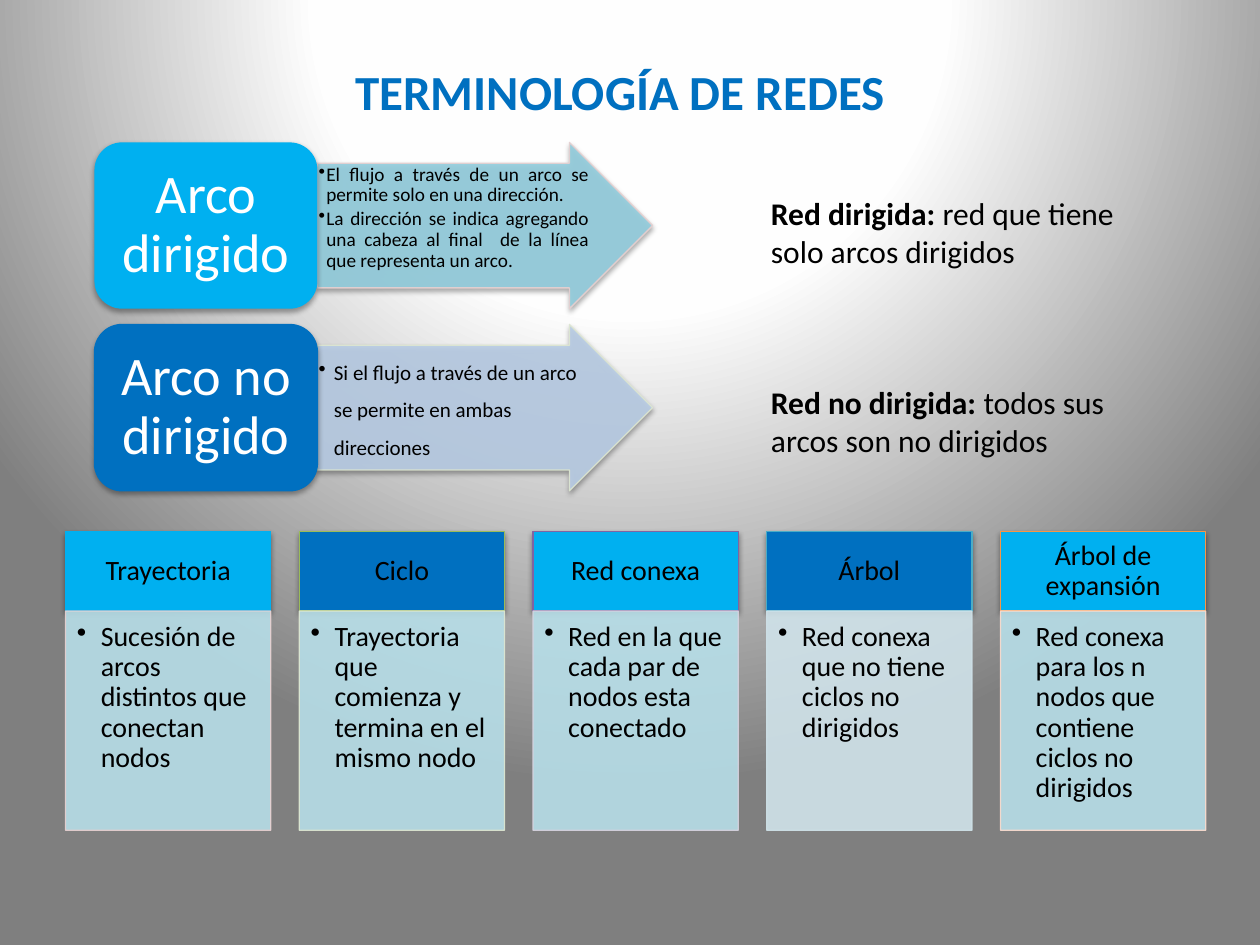
from lxml import etree
from pptx import Presentation
from pptx.dml.color import RGBColor
from pptx.enum.shapes import MSO_SHAPE
from pptx.enum.text import MSO_ANCHOR, PP_ALIGN
from pptx.oxml import parse_xml
from pptx.oxml.ns import qn
from pptx.util import Inches, Pt

LEFT, CENTER, JUSTIFY = PP_ALIGN.LEFT, PP_ALIGN.CENTER, PP_ALIGN.JUSTIFY
TOP, MIDDLE = MSO_ANCHOR.TOP, MSO_ANCHOR.MIDDLE
ARROW, ROUNDED, RECTANGLE = MSO_SHAPE.RIGHT_ARROW, MSO_SHAPE.ROUNDED_RECTANGLE, MSO_SHAPE.RECTANGLE

BLACK = RGBColor(0x00, 0x00, 0x00)
WHITE = RGBColor(0xFF, 0xFF, 0xFF)
SKY = RGBColor(0x00, 0xB0, 0xF0)
BLUE = RGBColor(0x00, 0x70, 0xC0)
TEAL = RGBColor(0x93, 0xCD, 0xDD)
LAVENDER = RGBColor(0xB9, 0xCD, 0xE5)
PALE_TEAL = RGBColor(0xB7, 0xDE, 0xE8)
PALE_BLUE = RGBColor(0xD0, 0xE3, 0xEA)
PALE_PINK = RGBColor(0xE8, 0xD0, 0xD0)
PALE_GREEN = RGBColor(0xDE, 0xE7, 0xD1)
PALE_PURPLE = RGBColor(0xD8, 0xD3, 0xE0)
PALE_ORANGE = RGBColor(0xFC, 0xDD, 0xCF)
GREEN = RGBColor(0x9B, 0xBB, 0x59)
PURPLE = RGBColor(0x80, 0x64, 0xA2)
AQUA = RGBColor(0x4B, 0xAC, 0xC6)
ORANGE = RGBColor(0xF7, 0x96, 0x46)
DRAWING_NS = 'xmlns:a="http://schemas.openxmlformats.org/drawingml/2006/main"'


def write_text(shape, paragraphs, size, color=BLACK, align=LEFT, anchor=TOP, insets=(0.1, 0.05, 0.1, 0.05),
               spacing=1.0, bullet_indent=0, gap=0, bold=False):
    """Each paragraph is a string, or a pair of a bold lead and plain text."""
    frame = shape.text_frame
    frame.word_wrap = True
    frame.vertical_anchor = anchor
    frame.margin_left, frame.margin_top, frame.margin_right, frame.margin_bottom = map(Inches, insets)
    for number, content in enumerate(paragraphs):
        para = frame.add_paragraph() if number else frame.paragraphs[0]
        para.alignment = align
        para.line_spacing = spacing
        para.space_before = Pt(gap if number else 0)
        runs = [(content, bold)] if isinstance(content, str) else zip(content, (True, False))
        for text, is_bold in runs:
            span = para.add_run()
            span.text = text
            span.font.name = "Calibri"
            span.font.size = Pt(size)
            span.font.bold = is_bold
            span.font.color.rgb = color
        if bullet_indent:
            properties = para._p.get_or_add_pPr()
            properties.set("marL", str(Inches(bullet_indent)))
            properties.set("indent", str(-Inches(bullet_indent)))
            etree.SubElement(properties, qn("a:buChar")).set("char", "•")


def add_box(kind, left, top, width, height, fill, line=None, opacity=100, shadow=0):
    box = slide.shapes.add_shape(kind, Inches(left), Inches(top), Inches(width), Inches(height))
    box.shadow.inherit = False
    box.fill.solid()
    box.fill.fore_color.rgb = fill
    if line is None:
        box.line.fill.background()
    else:
        box.line.color.rgb = line
        box.line.width = Pt(0.75)
    properties = box._element.spPr
    if opacity < 100:
        for color in properties.iter(qn("a:srgbClr")):
            etree.SubElement(color, qn("a:alpha")).set("val", str(opacity * 1000))
    if shadow:
        properties.find(qn("a:effectLst")).append(parse_xml(
            f'<a:outerShdw {DRAWING_NS} blurRad="{Pt(3.1)}" dist="{Pt(1.7)}" dir="5400000" rotWithShape="0">'
            f'<a:srgbClr val="000000"><a:alpha val="{shadow * 1000}"/></a:srgbClr></a:outerShdw>'))
    return box


deck = Presentation()
deck.slide_width, deck.slide_height = Inches(10), Inches(7.5)
slide = deck.slides.add_slide(deck.slide_layouts[5])

# Background: radial gradient centred above the slide
slide.background.fill.solid()
background = slide._element.find(".//" + qn("p:bgPr"))
background.replace(background[0], parse_xml(
    f'<a:gradFill {DRAWING_NS} rotWithShape="1"><a:gsLst>'
    '<a:gs pos="0"><a:srgbClr val="FFFFFF"/></a:gs>'
    '<a:gs pos="40000"><a:srgbClr val="FEFEFE"/></a:gs>'
    '<a:gs pos="100000"><a:srgbClr val="7F7F7F"/></a:gs></a:gsLst>'
    '<a:path path="circle"><a:fillToRect l="50000" t="-80000" r="50000" b="180000"/></a:path>'
    '</a:gradFill>'))

# Title
title = slide.shapes.title
title.left, title.top, title.width, title.height = map(Inches, (1.3, 0.44, 7.24, 0.57))
write_text(title, ["TERMINOLOGÍA DE REDES"], 28, color=BLUE, align=CENTER, anchor=MIDDLE, bold=True)

# Network definitions on the right
definitions = slide.shapes.add_textbox(Inches(6.02), Inches(1.49), Inches(3.39), Inches(2.22))
write_text(definitions, [("Red dirigida: ", "red que tiene solo arcos dirigidos"),
                         ("Red no dirigida: ", "todos sus arcos son no dirigidos")],
           18, insets=(0.1, 0.05, 0.3, 0.05), gap=65)

# Arc types: a label and an arrow with its explanation
arcs = [
    ("Arco dirigido", SKY, None, TEAL, PALE_PINK,
     ["El flujo a través de un arco se permite solo en una dirección.",
      "La dirección se indica agregando una cabeza al final  de la línea que representa un arco."],
     dict(size=11, align=JUSTIFY, spacing=0.9, bullet_indent=0.06, gap=1.65)),
    ("Arco no dirigido", BLUE, BLUE, LAVENDER, PALE_GREEN,
     ["Si el flujo a través de un arco se permite en ambas direcciones"],
     dict(size=12, spacing=1.5, bullet_indent=0.12)),
]
for row, (name, fill, line, arrow_fill, arrow_line, notes, style) in enumerate(arcs):
    top = 1.13 + row * 1.445
    arrow = add_box(ARROW, 2.52, top, 2.66, 1.32, arrow_fill, arrow_line, opacity=90, shadow=35)
    arrow.adjustments[0] = 0.75
    write_text(arrow, notes, insets=(0.01,) * 4, **style)
    label = add_box(ROUNDED, 0.75, top, 1.77, 1.32, fill, line, shadow=35)
    write_text(label, [name], 31, color=WHITE, align=CENTER, anchor=MIDDLE,
               insets=(0.13, 0.06, 0.13, 0.06), spacing=0.9)

# Term columns: a heading over its definition
terms = [
    ("Trayectoria", SKY, SKY, PALE_TEAL, PALE_PINK, "Sucesión de arcos distintos que conectan nodos"),
    ("Ciclo", BLUE, GREEN, PALE_TEAL, PALE_GREEN, "Trayectoria que comienza y termina en el mismo nodo"),
    ("Red conexa", SKY, PURPLE, PALE_TEAL, PALE_PURPLE, "Red en la que cada par de nodos esta conectado"),
    ("Árbol", BLUE, AQUA, PALE_BLUE, PALE_BLUE, "Red conexa que no tiene ciclos no dirigidos"),
    ("Árbol de expansión", SKY, ORANGE, PALE_TEAL, PALE_ORANGE,
     "Red conexa para los n nodos que contiene ciclos no dirigidos"),
]
for column, (name, fill, line, body_fill, body_line, definition) in enumerate(terms):
    left = 0.52 + column * 1.855
    heading = add_box(RECTANGLE, left, 4.22, 1.63, 0.63, fill, line, shadow=38)
    write_text(heading, [name], 16, align=CENTER, anchor=MIDDLE, insets=(0.12, 0.07, 0.12, 0.07), spacing=0.9)
    body = add_box(RECTANGLE, left, 4.85, 1.63, 1.74, body_fill, body_line, opacity=90)
    write_text(body, [definition], 16, insets=(0.09, 0.09, 0.12, 0.14), spacing=0.9, bullet_indent=0.19)

deck.save("out.pptx")
